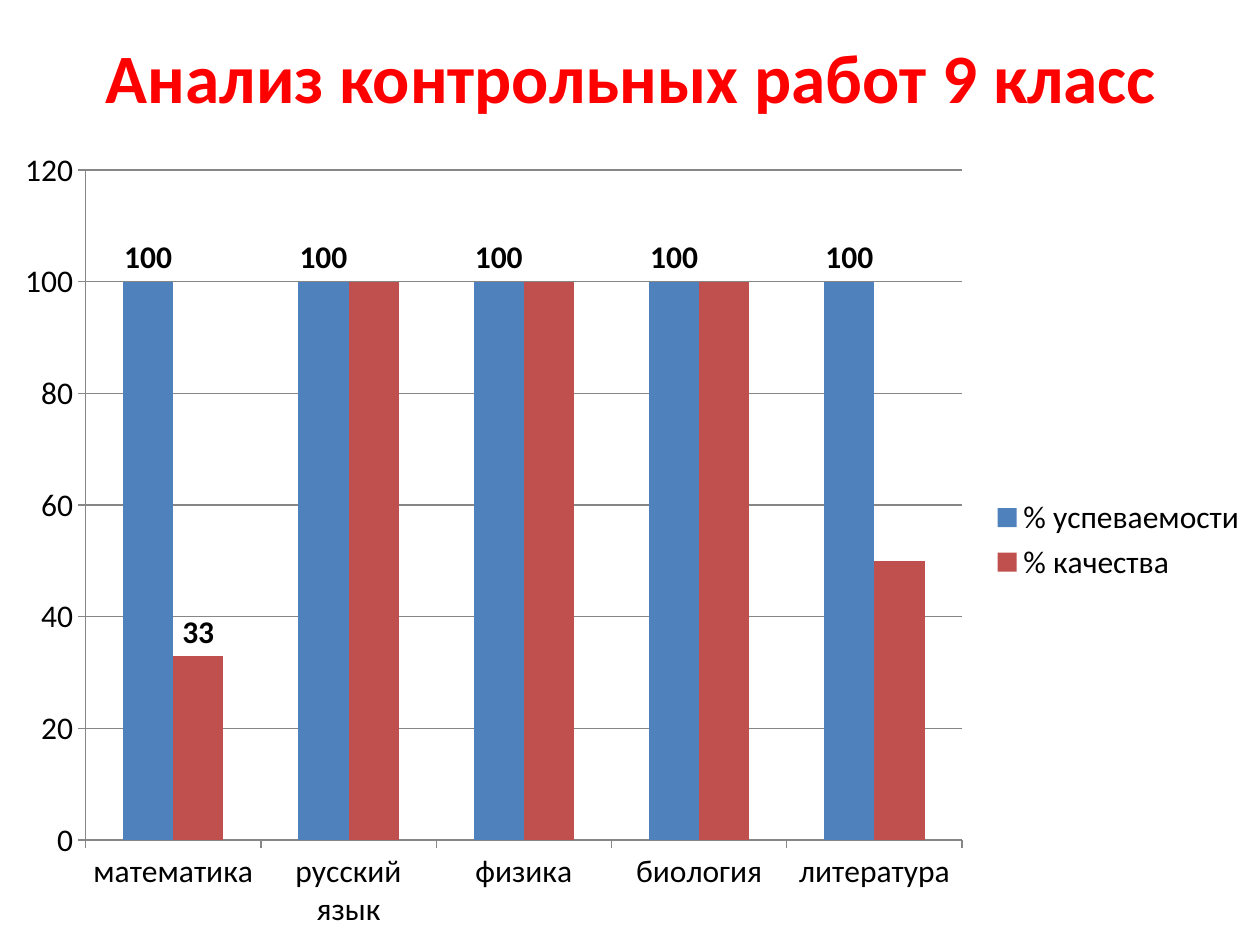
from pptx import Presentation
from pptx.chart.data import CategoryChartData
from pptx.dml.color import RGBColor
from pptx.enum.chart import XL_CHART_TYPE as ChartType
from pptx.enum.chart import XL_LABEL_POSITION as LabelPos
from pptx.enum.chart import XL_LEGEND_POSITION as LegendPos
from pptx.enum.chart import XL_TICK_MARK as Tick
from pptx.enum.text import MSO_ANCHOR, PP_ALIGN
from pptx.util import Inches, Pt

FONT = "Calibri"
COLORS = {"title": "FF0000", "text": "000000", "line": "868686",
          "pass": "4F81BD", "quality": "C0504D"}
SUBJECTS = ["математика", "русский язык", "физика", "биология", "литература"]
SERIES = [("% успеваемости", [100, 100, 100, 100, 100], "pass"),
          ("% качества ", [33, 100, 100, 100, 50], "quality")]


def rgb(name):
    return RGBColor.from_string(COLORS[name])


def style_font(font, size, color, bold=False):
    font.name, font.size, font.bold = FONT, Pt(size), bold
    font.color.rgb = rgb(color)


def add_title(slide, text, x, y, w, h):
    sp = slide.shapes.title
    sp.left, sp.top, sp.width, sp.height = map(Inches, (x, y, w, h))
    tf = sp.text_frame
    tf.text = text
    tf.word_wrap = True
    tf.vertical_anchor = MSO_ANCHOR.MIDDLE
    p = tf.paragraphs[0]
    p.alignment = PP_ALIGN.CENTER
    style_font(p.font, 39.6, "title", bold=True)


def style_axis(axis):
    axis.major_tick_mark = Tick.OUTSIDE
    axis.minor_tick_mark = Tick.NONE
    axis.format.line.color.rgb = rgb("line")


def add_results_chart(slide, x, y, w, h):
    data = CategoryChartData()
    data.categories = SUBJECTS
    for name, values, _ in SERIES:
        data.add_series(name, values)
    chart = slide.shapes.add_chart(
        ChartType.COLUMN_CLUSTERED, *map(Inches, (x, y, w, h)), data).chart
    style_font(chart.font, 18, "text")
    chart.has_title = False
    chart.has_legend = True
    chart.legend.position = LegendPos.RIGHT
    chart.legend.include_in_layout = False

    style_axis(chart.category_axis)
    axis = chart.value_axis
    style_axis(axis)
    axis.minimum_scale, axis.maximum_scale, axis.major_unit = 0, 120, 20
    axis.has_major_gridlines = True
    axis.major_gridlines.format.line.color.rgb = rgb("line")

    plot = chart.plots[0]
    plot.gap_width, plot.overlap = 150, 0
    plot.vary_by_categories = False
    for series, (_, _, color) in zip(plot.series, SERIES):
        series.format.fill.solid()
        series.format.fill.fore_color.rgb = rgb(color)

    passed, quality = plot.series
    labels = passed.data_labels
    labels.show_value = True
    labels.position = LabelPos.OUTSIDE_END
    style_font(labels.font, 18, "text", bold=True)
    label = quality.points[0].data_label
    style_font(label.font, 18, "text", bold=True)
    label.position = LabelPos.OUTSIDE_END


def main():
    prs = Presentation()
    prs.slide_width, prs.slide_height = Inches(10), Inches(7.5)
    slide = prs.slides.add_slide(prs.slide_layouts[5])
    add_title(slide, "Анализ контрольных работ 9 класс", 0.51, 0.21, 9, 0.79)
    add_results_chart(slide, 0, 1.07, 10, 6.43)
    prs.save("out.pptx")


if __name__ == "__main__":
    main()
